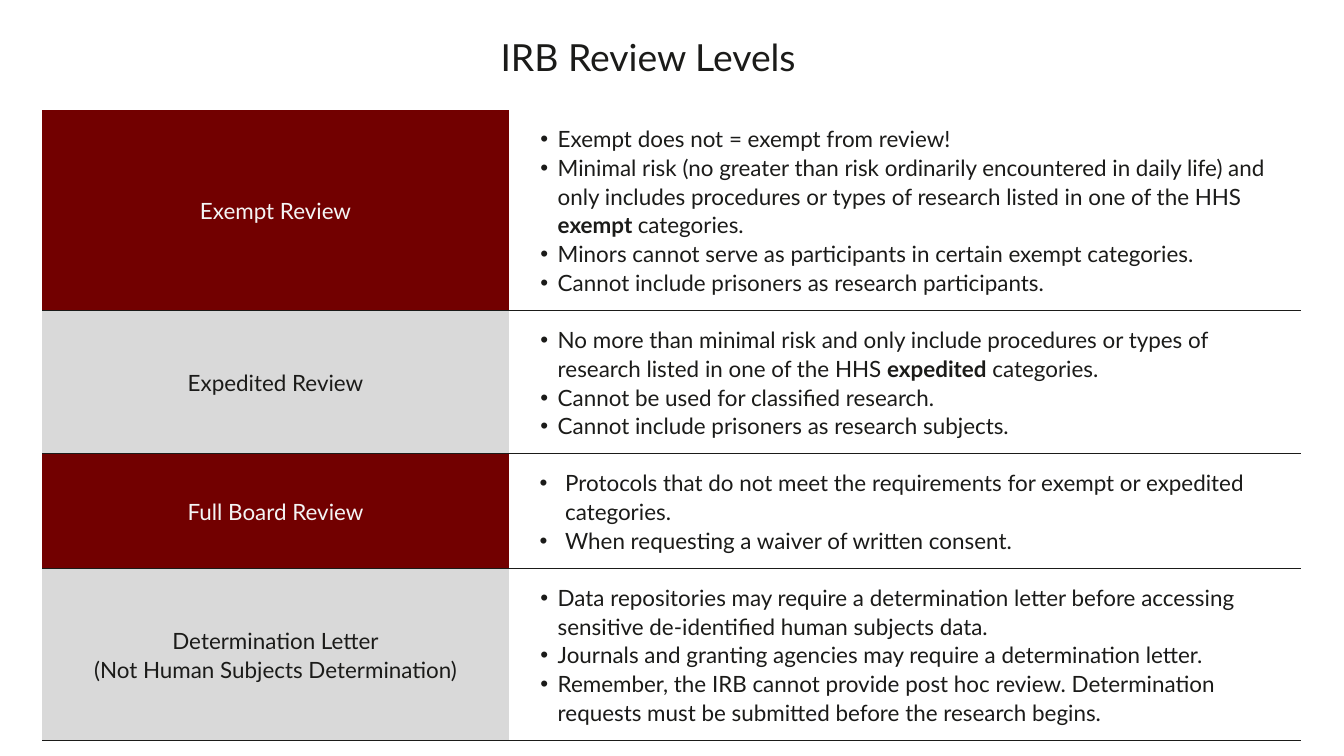
from lxml.etree import SubElement
from pptx import Presentation
from pptx.dml.color import RGBColor
from pptx.enum.text import MSO_ANCHOR, MSO_AUTO_SIZE, PP_ALIGN
from pptx.oxml import parse_xml
from pptx.oxml.ns import nsdecls, qn
from pptx.util import Inches, Pt

DARK = RGBColor(0x1B, 0x1B, 0x19)
LIGHT = RGBColor(0xF4, 0xF4, 0xF4)
MAROON = RGBColor(0x72, 0x00, 0x00)
GREY = RGBColor(0xD9, 0xD9, 0xD9)
WHITE = RGBColor(0xFF, 0xFF, 0xFF)
FONT = "Lato"

TITLE = "IRB Review Levels"
NARROW, WIDE = (0.52, 0.26), (0.63, 0.38)
BOLD_MARK = "**"
LEVELS = [
    (["Exempt Review"], 2.99, NARROW, [
        "Exempt does not = exempt from review!",
        "Minimal risk (no greater than risk ordinarily encountered in daily life) and only "
        "includes procedures or types of research listed in one of the HHS **exempt **categories.",
        "Minors cannot serve as participants in certain exempt categories.",
        "Cannot include prisoners as research participants.",
    ]),
    (["Expedited Review"], 2.13, NARROW, [
        "No more than minimal risk and only include procedures or types of research listed "
        "in one of the HHS **expedited** categories.",
        "Cannot be used for classified research.",
        "Cannot include prisoners as research subjects.",
    ]),
    (["Full Board Review"], 1.7, WIDE, [
        "Protocols that do not meet the requirements for exempt or expedited categories.",
        "When requesting a waiver of written consent.",
    ]),
    (["Determination Letter", "(Not Human Subjects Determination)"], 2.55, NARROW, [
        "Data repositories may require a determination letter before accessing sensitive "
        "de-identified human subjects data.",
        "Journals and granting agencies may require a determination letter.",
        "Remember, the IRB cannot provide post hoc review. Determination requests must be "
        "submitted before the research begins.",
    ]),
]
COLUMN_WIDTHS = (6.94, 11.79)


def set_font(paragraph, size, color):
    font = paragraph.font
    font.name, font.size, font.color.rgb = FONT, Pt(size), color


def set_borders(cell, has_top):
    properties = cell._tc.get_or_add_tcPr()
    sides = [("lnL", False), ("lnR", False), ("lnT", has_top), ("lnB", True)]
    for position, (side, visible) in enumerate(sides):
        paint = (f'<a:solidFill><a:srgbClr val="{DARK}"/></a:solidFill>'
                 if visible else "<a:noFill/>")
        width = Pt(0.75) if visible else 0
        properties.insert(position, parse_xml(
            f'<a:{side} {nsdecls("a")} w="{width}">{paint}</a:{side}>'))


def add_bullet(paragraph, left, hanging):
    paragraph.level = 1
    properties = paragraph._p.get_or_add_pPr()
    properties.set("marL", str(Inches(left)))
    properties.set("indent", str(-Inches(hanging)))
    SubElement(properties, qn("a:buFont")).set("typeface", "Arial")
    SubElement(properties, qn("a:buChar")).set("char", "•")


def fill_cell(cell, lines, fill, color, indent=None):
    cell.fill.solid()
    cell.fill.fore_color.rgb = fill
    cell.vertical_anchor = MSO_ANCHOR.MIDDLE
    cell.margin_left = cell.margin_right = Inches(0.21)
    cell.margin_top = cell.margin_bottom = Inches(0.21)
    frame = cell.text_frame
    for index, line in enumerate(lines):
        paragraph = frame.add_paragraph() if index else frame.paragraphs[0]
        paragraph.line_spacing = Pt(30.8)
        if indent:
            add_bullet(paragraph, *indent)
        else:
            paragraph.alignment = PP_ALIGN.CENTER
        set_font(paragraph, 24, color)
        for part, text in enumerate(line.split(BOLD_MARK)):
            run = paragraph.add_run()
            run.text = text
            run.font.bold = part % 2 == 1


def add_title(slide):
    title = slide.shapes.title
    title.left, title.top = Inches(1.61), Inches(0.14)
    title.width, title.height = Inches(16.07), Inches(0.94)
    frame = title.text_frame
    frame.margin_left = frame.margin_right = frame.margin_top = frame.margin_bottom = 0
    frame.vertical_anchor = MSO_ANCHOR.TOP
    frame.auto_size = MSO_AUTO_SIZE.NONE
    frame.text = TITLE
    paragraph = frame.paragraphs[0]
    paragraph.alignment = PP_ALIGN.CENTER
    paragraph.line_spacing = Pt(75)
    set_font(paragraph, 40, DARK)


def add_levels_table(slide):
    heights = [height for _, height, _, _ in LEVELS]
    table = slide.shapes.add_table(
        len(LEVELS), len(COLUMN_WIDTHS), Inches(0.63), Inches(1.63),
        Inches(sum(COLUMN_WIDTHS)), Inches(sum(heights))).table
    table.first_row = table.horz_banding = False
    for column, width in zip(table.columns, COLUMN_WIDTHS):
        column.width = Inches(width)
    for index, (name, height, indent, points) in enumerate(LEVELS):
        table.rows[index].height = Inches(height)
        fill, color = (GREY, DARK) if index % 2 else (MAROON, LIGHT)
        fill_cell(table.cell(index, 0), name, fill, color)
        fill_cell(table.cell(index, 1), points, WHITE, DARK, indent)
        for cell in table.rows[index].cells:
            set_borders(cell, index > 0)


def main():
    presentation = Presentation()
    presentation.slide_width, presentation.slide_height = Inches(20), Inches(11.25)
    slide = presentation.slides.add_slide(presentation.slide_layouts[5])
    add_levels_table(slide)
    add_title(slide)
    presentation.save("out.pptx")


if __name__ == "__main__":
    main()
